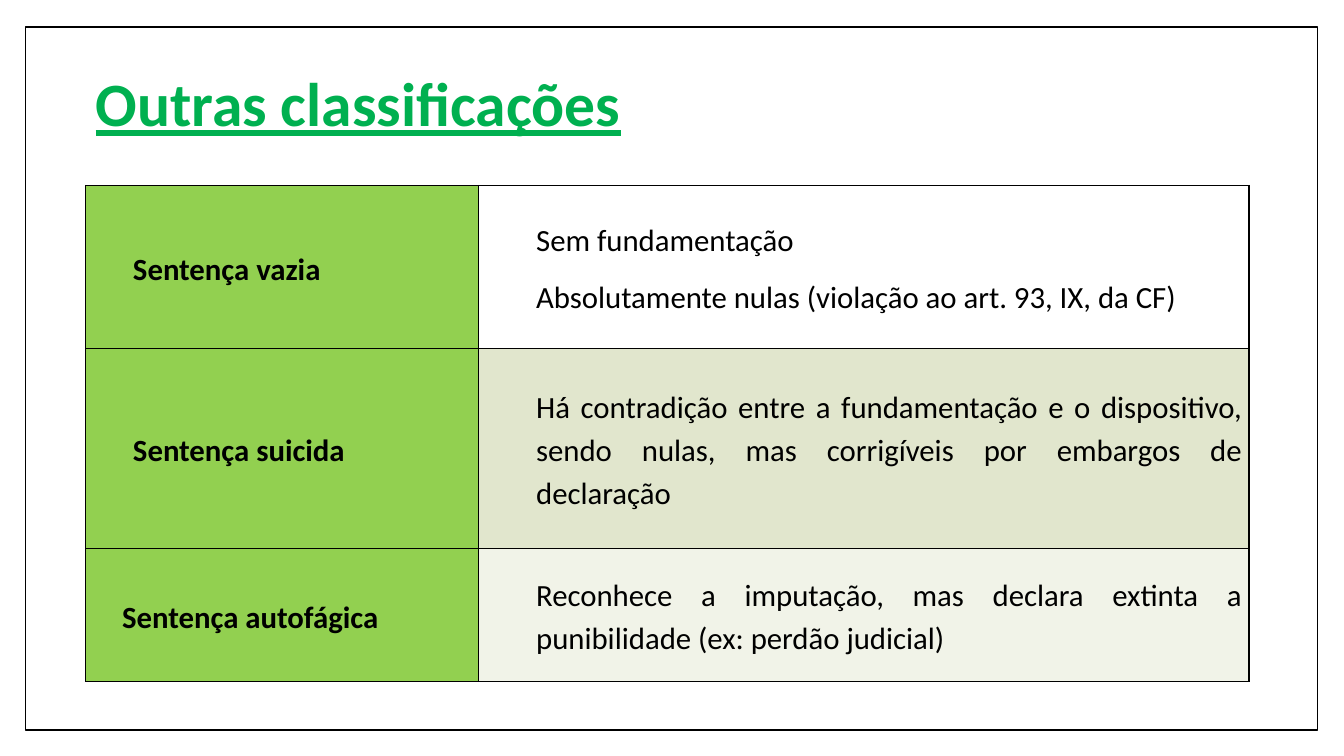
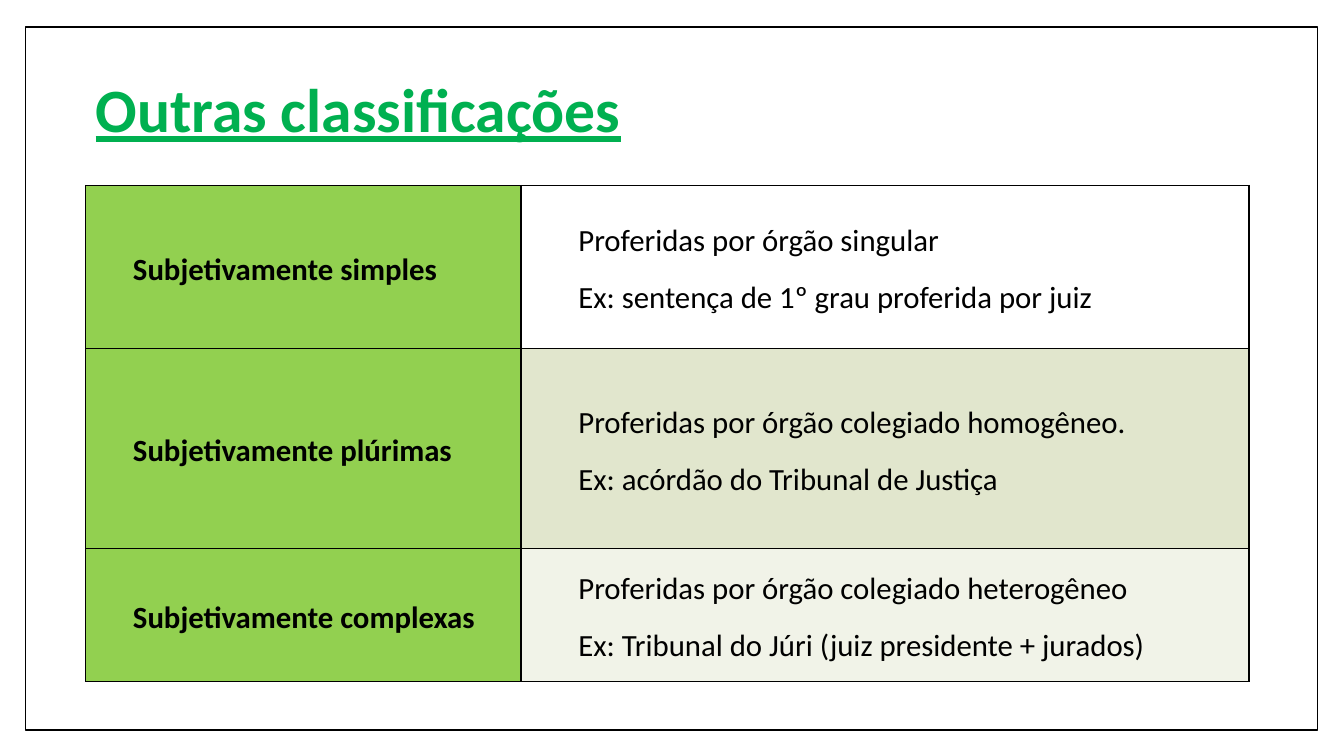
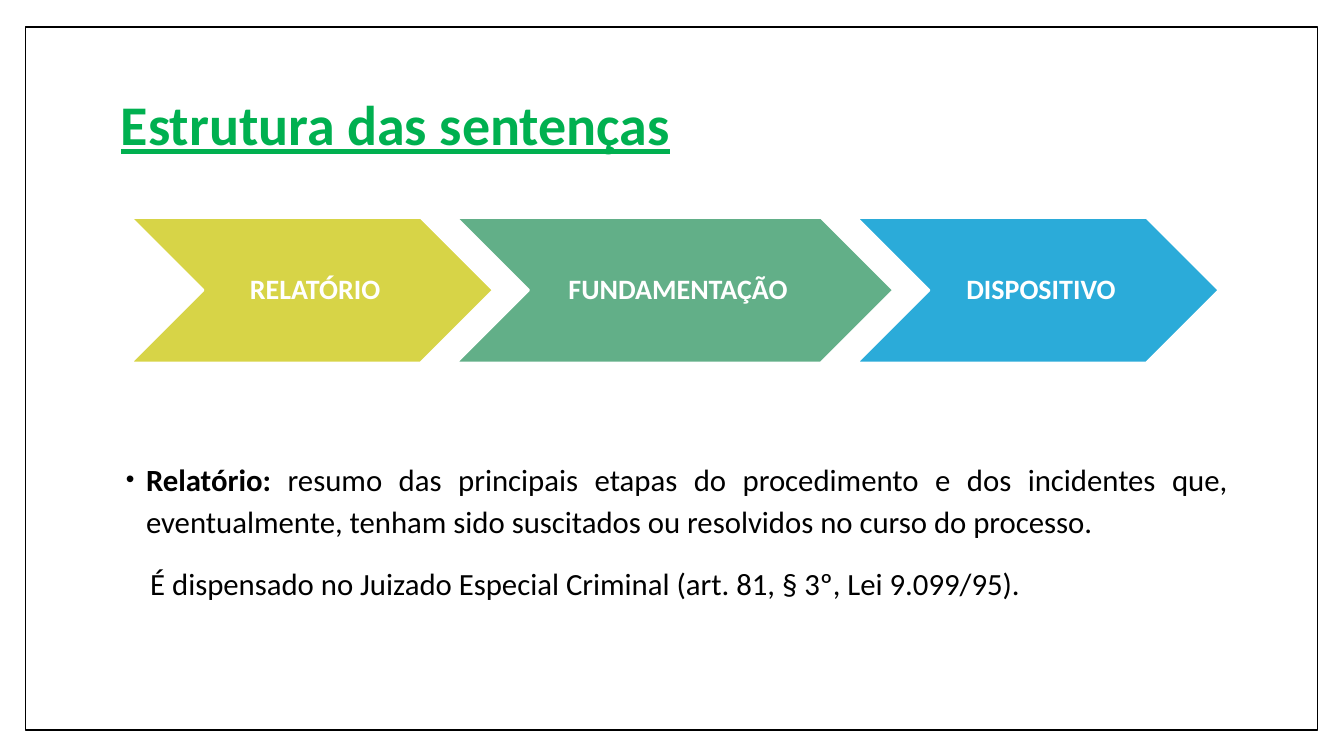
from dataclasses import dataclass
from typing import Any

from lxml.etree import SubElement
from pptx import Presentation
from pptx.dml.color import RGBColor
from pptx.enum.shapes import MSO_SHAPE as Preset
from pptx.enum.text import MSO_ANCHOR as Anchor, PP_ALIGN as Align
from pptx.oxml.ns import qn
from pptx.slide import Slide
from pptx.util import Pt

COLORS = {
    "ink": "000000",
    "paper": "FFFFFF",
    "title": "00B050",
    "term": "92D050",
    "sage": "E1E6CD",
    "pale_sage": "F1F3E8",
    "report": "D7D447",
    "grounds": "62AF88",
    "ruling": "2BABD9",
}
FONT = "Calibri"

# Shared text formats
TITLE_FONT = {"name": FONT, "bold": True, "underline": True}
BODY_FONT = {"name": FONT, "size": Pt(22), "bold": False}
TERM_FONT = {**BODY_FONT, "bold": True}
STEP_FONT = {**TERM_FONT, "size": Pt(20)}

TITLE_PARA = {"line_spacing": 0.9}
TERM_PARA = {"line_spacing": 1.15, "space_after": Pt(10)}
MEANING_PARA = {**TERM_PARA, "alignment": Align.JUSTIFY}
STEP_PARA = {"line_spacing": 0.9, "alignment": Align.CENTER}
NOTE_PARA = {"line_spacing": 1.14, "alignment": Align.JUSTIFY}

CELL_FORMAT = {
    "vertical_anchor": Anchor.MIDDLE,
    "margin_left": Pt(5),
    "margin_right": Pt(5),
    "margin_top": Pt(0),
    "margin_bottom": Pt(0),
}
STEP_FRAME = {
    "word_wrap": True,
    "vertical_anchor": Anchor.MIDDLE,
    "margin_left": Pt(6.5),
    "margin_right": Pt(2),
    "margin_top": Pt(2),
    "margin_bottom": Pt(2),
}

ROW_HEIGHTS = (116.6, 142.6, 95)
MEANING_FILLS = ("paper", "sage", "pale_sage")
TABLE_LEFT, TABLE_TOP, TABLE_WIDTH = 61.2, 132.5, 831
STEP_LEFT, STEP_TOP, STEP_HEIGHT, STEP_OVERLAP = 93.6, 155.5, 103.5, 26


@dataclass
class Title:
    text: str
    left: float
    top: float
    width: float
    height: float
    size: float


@dataclass
class Definition:
    term: str
    meanings: tuple[str, ...]
    indent: float = 28.8


@dataclass
class Step:
    label: str
    color: str
    width: float


@dataclass
class ClassificationSlide:
    title: Title
    term_width: float
    definitions: tuple[Definition, ...]


CLASSIFICATIONS = (
    ClassificationSlide(
        Title("Outras classificações", 61.2, 38.2, 777.6, 76.3, 44),
        280.8,
        (
            Definition("Sentença vazia", (
                "Sem fundamentação",
                "Absolutamente nulas (violação ao art. 93, IX, da CF)")),
            Definition("Sentença suicida", (
                "Há contradição entre a fundamentação e o dispositivo, sendo nulas, "
                "mas corrigíveis por embargos de declaração",)),
            Definition("Sentença autofágica", (
                "Reconhece a imputação, mas declara extinta a punibilidade "
                "(ex: perdão judicial)",), 21),
        ),
    ),
    ClassificationSlide(
        Title("Outras classificações", 61.2, 42.5, 777.6, 76.3, 44),
        311,
        (
            Definition("Subjetivamente simples", (
                "Proferidas por órgão singular",
                "Ex: sentença de 1º grau proferida por juiz")),
            Definition("Subjetivamente plúrimas", (
                "Proferidas por órgão colegiado homogêneo.",
                "Ex: acórdão do Tribunal de Justiça")),
            Definition("Subjetivamente complexas", (
                "Proferidas por órgão colegiado heterogêneo",
                "Ex: Tribunal do Júri (juiz presidente + jurados)")),
        ),
    ),
)

STRUCTURE_TITLE = Title("Estrutura das sentenças", 79.2, 51, 828, 80.6, 40)
STEPS = (
    Step("RELATÓRIO", "report", 258.5),
    Step("FUNDAMENTAÇÃO", "grounds", 312),
    Step("DISPOSITIVO", "ruling", 258.5),
)


def rgb(color: str) -> RGBColor:
    return RGBColor.from_string(COLORS[color])


def apply_format(target: Any, values: dict[str, Any]) -> None:
    for attribute, value in values.items():
        setattr(target, attribute, value)


def add_text(paragraph: Any, text: str, font: dict[str, Any], color: str = "ink") -> None:
    run = paragraph.add_run()
    run.text = text
    apply_format(run.font, font)
    run.font.color.rgb = rgb(color)


def set_indent(paragraph: Any, left: float, first: float = 0) -> None:
    properties = paragraph._p.get_or_add_pPr()
    properties.set("marL", str(Pt(left)))
    properties.set("indent", str(Pt(first)))


def add_bullet(paragraph: Any) -> None:
    properties = paragraph._p.get_or_add_pPr()
    bullet_color = SubElement(properties, qn("a:buClr"))
    SubElement(bullet_color, qn("a:srgbClr"), val=COLORS["ink"])
    SubElement(properties, qn("a:buSzPct"), val="80000")
    SubElement(properties, qn("a:buFont"), typeface="Arial")
    SubElement(properties, qn("a:buChar"), char="•")


def add_panel(slide: Slide, preset: Preset, box: tuple[float, ...], fill: str,
              line: str, line_width: float) -> Any:
    panel = slide.shapes.add_shape(preset, *map(Pt, box))
    panel.shadow.inherit = False
    panel.fill.solid()
    panel.fill.fore_color.rgb = rgb(fill)
    panel.line.color.rgb = rgb(line)
    panel.line.width = Pt(line_width)
    return panel


def start_slide(deck: Any, title: Title) -> Slide:
    """Add a slide with the shared border and title style."""
    slide = deck.slides.add_slide(deck.slide_layouts[6])
    add_panel(slide, Preset.RECTANGLE, (18, 19.4, 923, 502), "paper", "ink", 1)
    heading = slide.shapes.add_textbox(
        Pt(title.left), Pt(title.top), Pt(title.width), Pt(title.height)).text_frame
    apply_format(heading, {"word_wrap": True, "vertical_anchor": Anchor.MIDDLE})
    apply_format(heading.paragraphs[0], TITLE_PARA)
    add_text(heading.paragraphs[0], title.text,
             {**TITLE_FONT, "size": Pt(title.size)}, "title")
    return slide


def fill_cell(cell: Any, texts: tuple[str, ...], fill: str, indent: float,
              para: dict[str, Any], font: dict[str, Any]) -> None:
    apply_format(cell, CELL_FORMAT)
    # Borders come before the fill in the cell properties
    properties = cell._tc.get_or_add_tcPr()
    for side in ("lnL", "lnR", "lnT", "lnB"):
        border = SubElement(properties, qn(f"a:{side}"), w=str(Pt(1)))
        SubElement(SubElement(border, qn("a:solidFill")), qn("a:srgbClr"),
                   val=COLORS["ink"])
    cell.fill.solid()
    cell.fill.fore_color.rgb = rgb(fill)
    for index, text in enumerate(texts):
        frame = cell.text_frame
        paragraph = frame.add_paragraph() if index else frame.paragraphs[0]
        apply_format(paragraph, para)
        set_indent(paragraph, indent)
        add_text(paragraph, text, font)


def add_definitions(slide: Slide, content: ClassificationSlide) -> None:
    table = slide.shapes.add_table(
        len(content.definitions), 2, Pt(TABLE_LEFT), Pt(TABLE_TOP),
        Pt(TABLE_WIDTH), Pt(sum(ROW_HEIGHTS))).table
    apply_format(table, {"first_row": False, "horz_banding": False})
    table.columns[0].width = Pt(content.term_width)
    table.columns[1].width = Pt(TABLE_WIDTH - content.term_width)
    for index, (definition, height, fill) in enumerate(
            zip(content.definitions, ROW_HEIGHTS, MEANING_FILLS)):
        table.rows[index].height = Pt(height)
        fill_cell(table.cell(index, 0), (definition.term,), "term",
                  definition.indent, TERM_PARA, TERM_FONT)
        fill_cell(table.cell(index, 1), definition.meanings, fill,
                  36, MEANING_PARA, BODY_FONT)


def add_steps(slide: Slide) -> None:
    left = STEP_LEFT
    for step in STEPS:
        chevron = add_panel(slide, Preset.CHEVRON,
                            (left, STEP_TOP, step.width, STEP_HEIGHT),
                            step.color, "paper", 1.5)
        apply_format(chevron.text_frame, STEP_FRAME)
        label = chevron.text_frame.paragraphs[0]
        apply_format(label, STEP_PARA)
        add_text(label, step.label, STEP_FONT, "paper")
        left += step.width - STEP_OVERLAP


def add_report_notes(slide: Slide) -> None:
    notes = slide.shapes.add_textbox(Pt(79.2), Pt(322), Pt(805), Pt(172)).text_frame
    notes.word_wrap = True

    summary = notes.paragraphs[0]
    apply_format(summary, NOTE_PARA)
    set_indent(summary, 18, -14.4)
    add_bullet(summary)
    add_text(summary, "Relatório: ", TERM_FONT)
    add_text(summary, "resumo das principais etapas do procedimento e dos incidentes "
             "que, eventualmente, tenham sido suscitados ou resolvidos no curso do "
             "processo.", BODY_FONT)

    exemption = notes.add_paragraph()
    apply_format(exemption, {**NOTE_PARA, "space_before": Pt(14)})
    set_indent(exemption, 21)
    add_text(exemption, "É dispensado no Juizado Especial Criminal "
             "(art. 81, § 3º, Lei 9.099/95).", BODY_FONT)


def main() -> None:
    deck = Presentation()
    apply_format(deck, {"slide_width": Pt(960), "slide_height": Pt(540)})

    # Classification tables
    for content in CLASSIFICATIONS:
        add_definitions(start_slide(deck, content.title), content)

    # Structure of a sentence
    structure = start_slide(deck, STRUCTURE_TITLE)
    add_steps(structure)
    add_report_notes(structure)

    deck.save("out.pptx")


if __name__ == "__main__":
    main()
